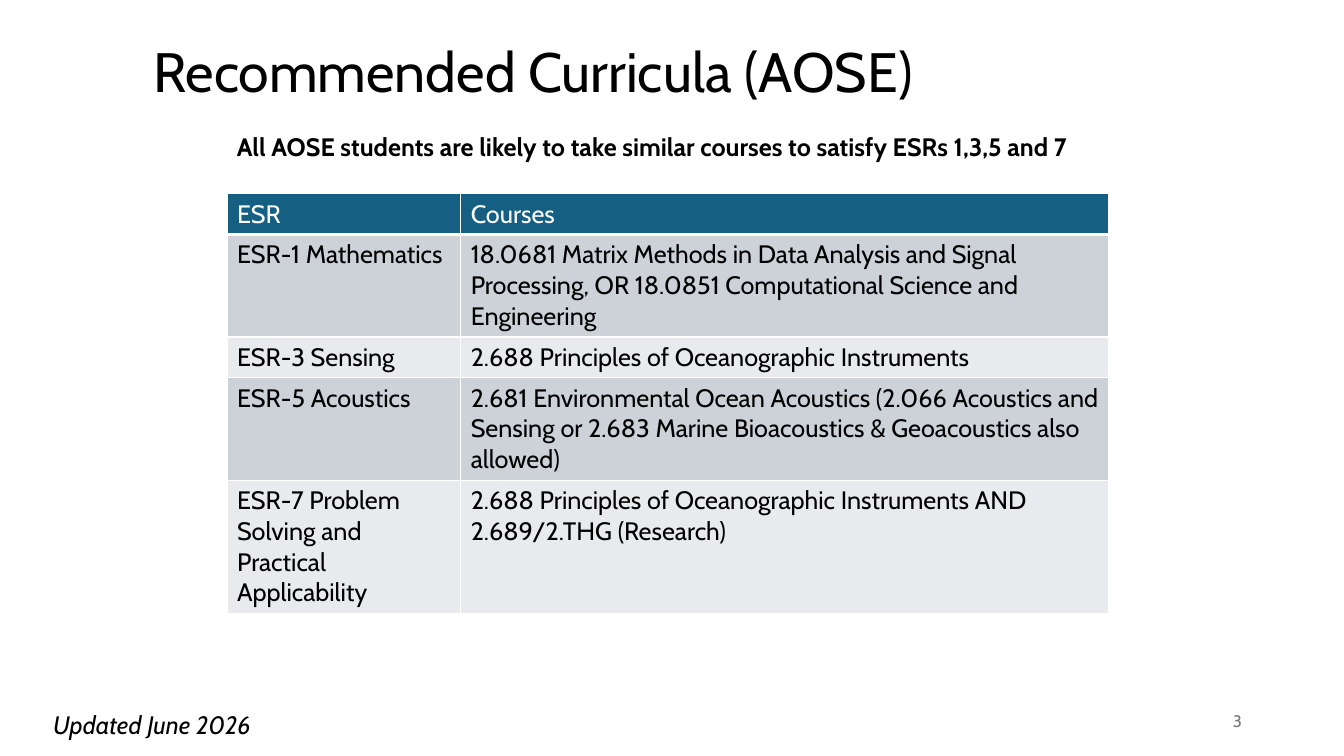
from dataclasses import dataclass

from lxml.etree import SubElement
from pptx import Presentation
from pptx.dml.color import RGBColor
from pptx.enum.text import MSO_ANCHOR, MSO_AUTO_SIZE, PP_ALIGN
from pptx.oxml.ns import qn
from pptx.slide import Slide
from pptx.table import _Cell
from pptx.text.text import TextFrame
from pptx.util import Cm, Pt

FONT = "Cabin"
BLACK, WHITE, GREY = "000000", "FFFFFF", "797979"
HEAD, BANDS = "156082", ("E8EAED", "CCD2D8")
LINE, PAD = 0.77, 0.26  # text line and cell padding, in cm


@dataclass
class Row:
    esr: str
    course: str
    lines: int


@dataclass
class Note:
    text: str
    left: float
    top: float
    width: float
    size: float = 18
    color: str = BLACK
    bold: bool = False
    italic: bool = False
    align: PP_ALIGN = PP_ALIGN.LEFT
    anchor: MSO_ANCHOR = MSO_ANCHOR.TOP


ROWS = [
    Row("ESR", "Courses", 1),
    Row("ESR-1 Mathematics",
        "18.0681 Matrix Methods in Data Analysis and Signal Processing, "
        "OR 18.0851 Computational Science and Engineering", 3),
    Row("ESR-3 Sensing", "2.688 Principles of Oceanographic Instruments", 1),
    Row("ESR-5 Acoustics",
        "2.681 Environmental Ocean Acoustics (2.066 Acoustics and Sensing "
        "or 2.683 Marine Bioacoustics & Geoacoustics also allowed)", 3),
    Row("ESR-7 Problem Solving and Practical Applicability",
        "2.688 Principles of Oceanographic Instruments AND\n"
        "2.689/2.THG (Research)", 4),
]

NOTES = [
    Note("3", 23.93, 17.65, 7.62, size=12, color=GREY,
         align=PP_ALIGN.RIGHT, anchor=MSO_ANCHOR.MIDDLE),
    Note("All AOSE students are likely to take similar courses "
         "to satisfy ESRs 1,3,5 and 7", 5.72, 3.18, 22.76, bold=True),
    Note("Updated June 2026", 1.09, 17.75, 5.79, italic=True),
]


def paint(hue: str) -> RGBColor:
    return RGBColor.from_string(hue)


def write(frame: TextFrame, text: str, *, size: float = 18,
          color: str = BLACK, bold: bool = False, italic: bool = False,
          align: PP_ALIGN = PP_ALIGN.LEFT) -> None:
    frame.text = text
    frame.word_wrap = True
    for para in frame.paragraphs:
        para.alignment = align
        for run in para.runs:
            font = run.font
            font.name, font.size = FONT, Pt(size)
            font.bold, font.italic = bold, italic
            font.color.rgb = paint(color)


def edge(cell: _Cell, base: float) -> None:
    """Give the cell white borders, the lower one base points wide."""
    props = cell._tc.get_or_add_tcPr()
    for side, width in zip("LRTB", (1, 1, 1, base)):
        line = SubElement(props, qn(f"a:ln{side}"), w=str(Pt(width)))
        fill = SubElement(line, qn("a:solidFill"))
        SubElement(fill, qn("a:srgbClr"), val=WHITE)


def add_title(slide: Slide, text: str) -> None:
    title = slide.shapes.title
    title.left, title.top = Cm(3.61), Cm(1.04)
    title.width, title.height = Cm(25.4), Cm(1.7)
    frame = title.text_frame
    write(frame, text, size=39.6)
    frame.auto_size = MSO_AUTO_SIZE.NONE
    frame.vertical_anchor = MSO_ANCHOR.MIDDLE
    frame.paragraphs[0].line_spacing = 0.9


def add_note(slide: Slide, note: Note) -> None:
    box = slide.shapes.add_textbox(
        Cm(note.left), Cm(note.top), Cm(note.width), Cm(1.03))
    write(box.text_frame, note.text, size=note.size, color=note.color,
          bold=note.bold, italic=note.italic, align=note.align)
    box.text_frame.vertical_anchor = note.anchor


def add_grid(slide: Slide, rows: list[Row]) -> None:
    tall = [PAD + LINE * row.lines for row in rows]
    grid = slide.shapes.add_table(
        len(rows), 2, Cm(5.72), Cm(4.88), Cm(22.22), Cm(sum(tall))).table
    for col, width in zip(grid.columns, (5.89, 16.33)):
        col.width = Cm(width)
    for i, row in enumerate(rows):
        grid.rows[i].height = Cm(tall[i])
        for j, text in enumerate((row.esr, row.course)):
            cell = grid.cell(i, j)
            write(cell.text_frame, text, color=BLACK if i else WHITE)
            edge(cell, 1 if i else 3)
            cell.fill.solid()
            cell.fill.fore_color.rgb = paint(BANDS[i % 2] if i else HEAD)


def main() -> None:
    deck = Presentation()
    deck.slide_width, deck.slide_height = Cm(33.87), Cm(19.05)
    slide = deck.slides.add_slide(deck.slide_layouts[5])
    add_title(slide, "Recommended Curricula (AOSE)")
    add_grid(slide, ROWS)
    for note in NOTES:
        add_note(slide, note)
    deck.save("out.pptx")


if __name__ == "__main__":
    main()
